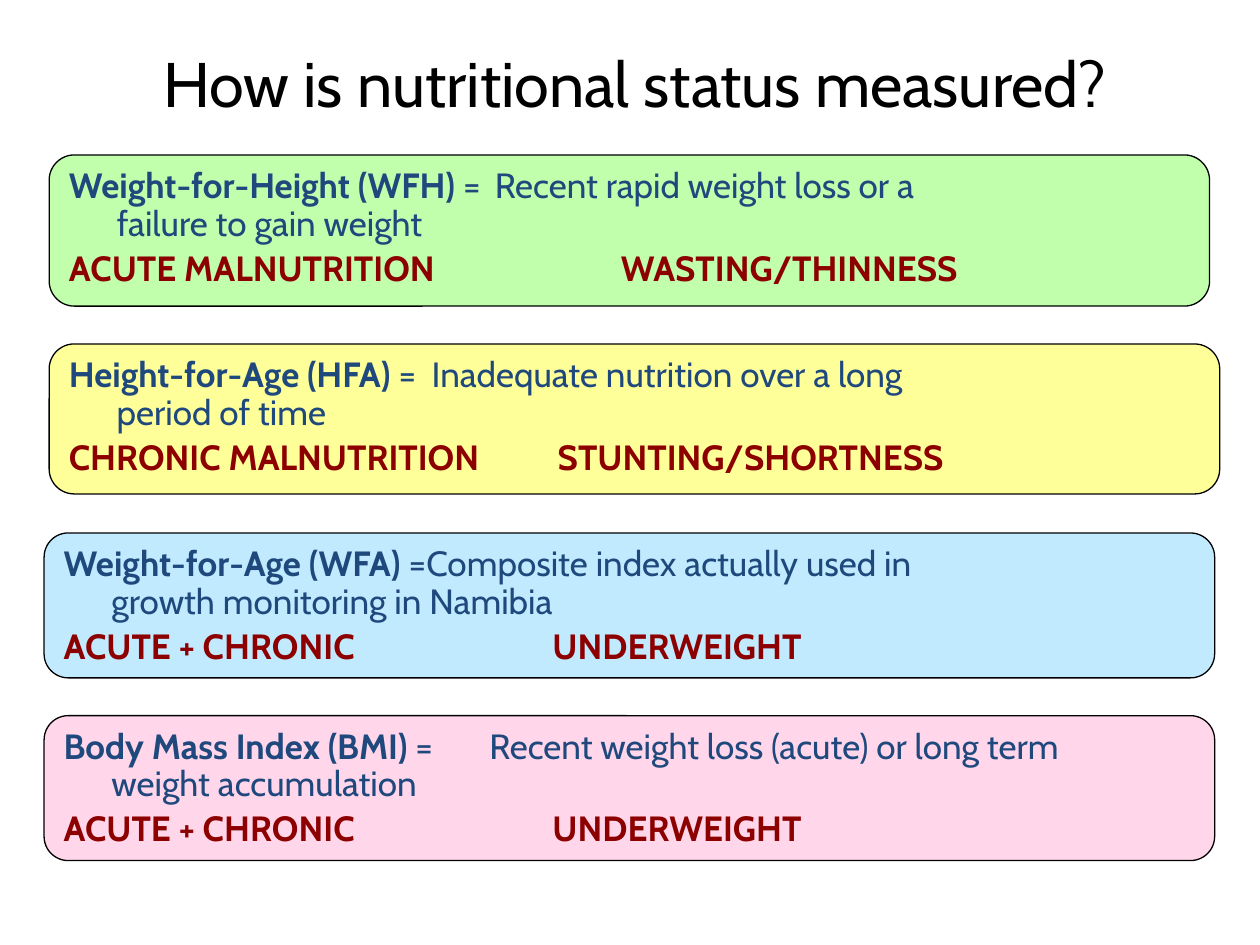
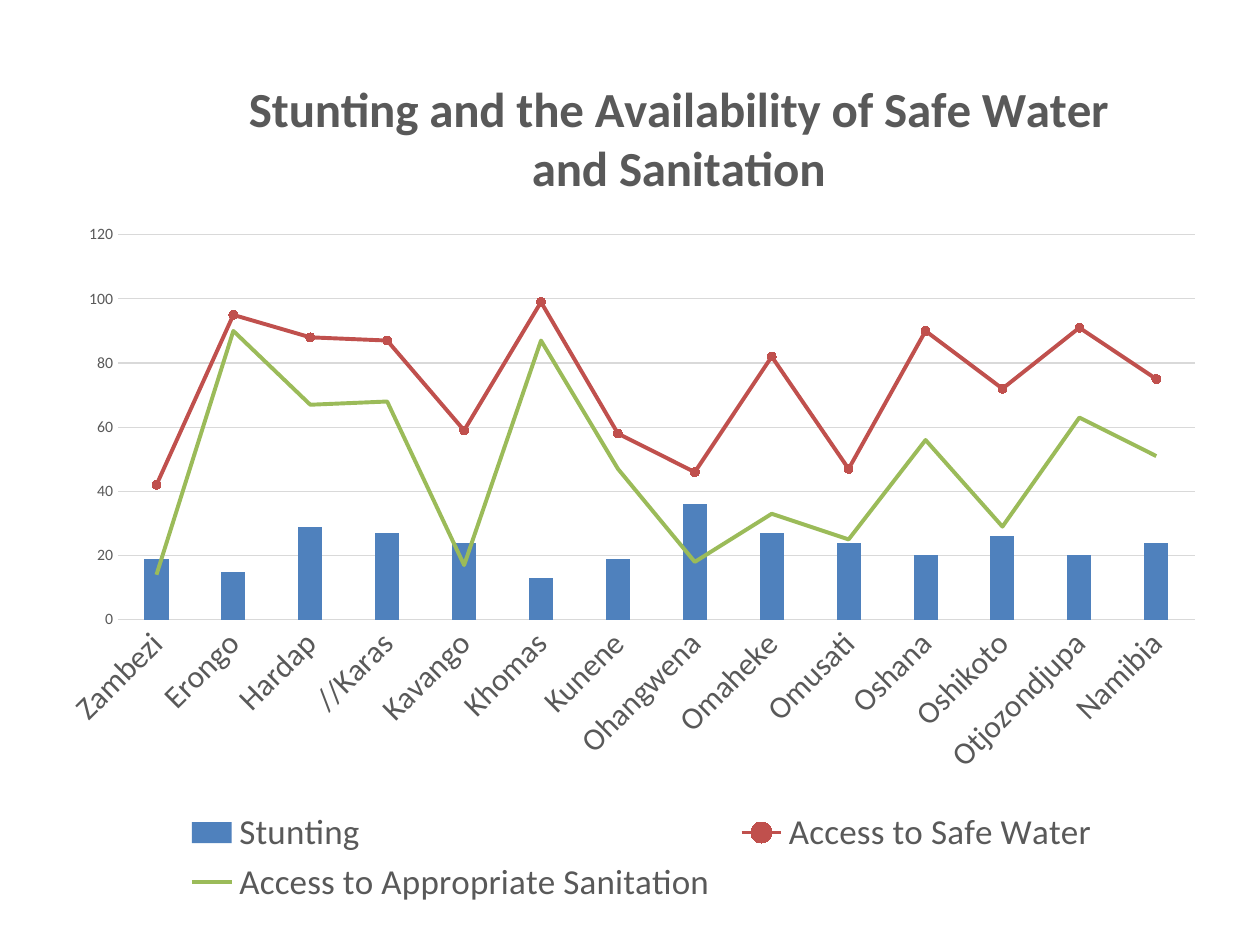
from copy import deepcopy
from lxml.etree import SubElement
from pptx import Presentation
from pptx.chart.data import CategoryChartData
from pptx.dml.color import RGBColor
from pptx.enum.chart import (XL_CHART_TYPE, XL_LEGEND_POSITION,
                             XL_MARKER_STYLE, XL_TICK_MARK)
from pptx.enum.shapes import MSO_SHAPE
from pptx.enum.text import MSO_ANCHOR, PP_ALIGN
from pptx.oxml import parse_xml
from pptx.oxml.ns import nsdecls, qn
from pptx.util import Inches, Pt

BLACK, NAVY, MAROON = "000000", "1F497D", "8C0000"
GREY, PALE = "595959", "D9D9D9"
HEAD, BODY = "Cabin", "Calibri"

CARDS = [
    ((0.39, 1.23, 9.21, 1.2), "66FF33", "Weight-for-Height (WFH)",
     " =\tRecent rapid weight loss or a", "failure to gain weight",
     "ACUTE MALNUTRITION\t\t\tWASTING/THINNESS"),
    ((0.39, 2.73, 9.29, 1.19), "FFFF00", "Height-for-Age (HFA)",
     " =\tInadequate nutrition over a long", "period of time",
     "CHRONIC MALNUTRITION\t\tSTUNTING/SHORTNESS"),
    ((0.35, 4.23, 9.29, 1.15), "66CCFF", "Weight-for-Age (WFA)",
     " =\tComposite index actually used in", "growth monitoring in Namibia",
     "ACUTE + CHRONIC\t\t\t\tUNDERWEIGHT"),
    ((0.35, 5.68, 9.29, 1.15), "FF99CC", "Body Mass Index (BMI)",
     " =\tRecent weight loss (acute) or long term", "weight accumulation",
     "ACUTE + CHRONIC\t\t\t\tUNDERWEIGHT"),
]

REGIONS = ["Zambezi", "Erongo", "Hardap", "//Karas", "Kavango", "Khomas",
           "Kunene", "Ohangwena", "Omaheke", "Omusati", "Oshana",
           "Oshikoto", "Otjozondjupa", "Namibia"]
SERIES = [
    ("Stunting", "4F81BD",
     [19, 15, 29, 27, 24, 13, 19, 36, 27, 24, 20, 26, 20, 24]),
    ("Access to Safe Water", "C0504D",
     [42, 95, 88, 87, 59, 99, 58, 46, 82, 47, 90, 72, 91, 75]),
    ("Access to Appropriate Sanitation", "9BBB59",
     [14, 90, 67, 68, 17, 87, 47, 18, 33, 25, 56, 29, 63, 51]),
]


def rgb(code):
    """Turn a hex string into a colour."""
    return RGBColor.from_string(code)


def style(font, size, code, name, bold=False):
    """Set the look of a font."""
    font.size, font.name, font.bold = Pt(size), name, bold
    font.color.rgb = rgb(code)


def paint(fill, code, alpha=None):
    """Fill with one colour, see-through if alpha percent is given."""
    fill.solid()
    fill.fore_color.rgb = rgb(code)
    if alpha:
        tint = fill._xPr.find(qn("a:solidFill"))[0]
        SubElement(tint, qn("a:alpha")).set("val", str(alpha * 1000))


def stroke(line, code, width):
    """Set the colour and width of a line."""
    line.color.rgb = rgb(code)
    line.width = Pt(width)


def title(slide, text, box):
    """Add a centred slide title."""
    frame = slide.shapes.add_textbox(*map(Inches, box)).text_frame
    frame.word_wrap = True
    frame.vertical_anchor = MSO_ANCHOR.MIDDLE
    frame.text = text
    para = frame.paragraphs[0]
    para.alignment = PP_ALIGN.CENTER
    style(para.runs[0].font, 36, BLACK, HEAD)


def card(slide, box, code, term, start, rest, result):
    """Add one rounded card with an index, its meaning and its result."""
    shape = slide.shapes.add_shape(MSO_SHAPE.ROUNDED_RECTANGLE,
                                   *map(Inches, box))
    shape.shadow.inherit = False
    paint(shape.fill, code, 40)
    stroke(shape.line, BLACK, 0.75)
    frame = shape.text_frame
    frame.word_wrap = True
    frame.vertical_anchor = MSO_ANCHOR.TOP
    frame.text = term + "\n" + result
    top, low = frame.paragraphs
    top.add_run().text = start
    top.add_line_break()
    top.add_run().text = rest
    for para, hue in ((top, NAVY), (low, MAROON)):
        para.alignment = PP_ALIGN.LEFT
        para.line_spacing = 0.9
        para.space_before = Pt(4)
        props = para._p.get_or_add_pPr()
        props.set("marL", str(Inches(0.38)))
        props.set("indent", str(Inches(-0.38)))
        for spot, run in enumerate(para.runs):
            style(run.font, 20, hue, HEAD, spot == 0)


def place(node, left, top, width=None, height=None, inner=False):
    """Fix a chart part at fractions of the chart's size."""
    for old in node.findall(qn("c:layout")):
        node.remove(old)
    pairs = [("xMode", "edge"), ("yMode", "edge"), ("x", left), ("y", top)]
    if inner:
        pairs.insert(0, ("layoutTarget", "inner"))
    if width:
        pairs += [("w", width), ("h", height)]
    parts = "".join(f'<c:{key} val="{val}"/>' for key, val in pairs)
    layout = parse_xml(f'<c:layout {nsdecls("c")}><c:manualLayout>{parts}'
                       '</c:manualLayout></c:layout>')
    before = [kid for kid in node
              if kid.tag in (qn("c:tx"), qn("c:legendPos"))]
    node.insert(node.index(before[-1]) + 1 if before else 0, layout)


def split(chart):
    """Move all series but the first from columns to lines."""
    bars = chart.plots[0]._element
    lines = parse_xml(f'<c:lineChart {nsdecls("c")}>'
                      '<c:grouping val="standard"/><c:varyColors val="0"/>'
                      '</c:lineChart>')
    for ser in bars.findall(qn("c:ser"))[1:]:
        for flag in ser.findall(qn("c:invertIfNegative")):
            ser.remove(flag)
        lines.append(ser)
    SubElement(lines, qn("c:marker")).set("val", "1")
    for axis in bars.findall(qn("c:axId")):
        lines.append(deepcopy(axis))
    bars.addnext(lines)


def plot(slide, box):
    """Add the chart of stunting columns and access lines."""
    data = CategoryChartData()
    data.categories = REGIONS
    for name, _, vals in SERIES:
        data.add_series(name, vals)
    chart = slide.shapes.add_chart(XL_CHART_TYPE.COLUMN_CLUSTERED,
                                   *map(Inches, box), data).chart
    style(chart.font, 10, BLACK, BODY)
    split(chart)
    bars, lines = chart.plots
    bars.gap_width, bars.vary_by_categories = 219, False
    paint(bars.series[0].format.fill, SERIES[0][1])
    for ser, (_, code, _) in zip(lines.series, SERIES[1:]):
        stroke(ser.format.line, code, 2.25)
        ser.smooth = False
        ser.marker.style = XL_MARKER_STYLE.NONE
    dots = lines.series[0].marker
    dots.style, dots.size = XL_MARKER_STYLE.CIRCLE, 5
    paint(dots.format.fill, SERIES[1][1])
    stroke(dots.format.line, SERIES[1][1], 0.75)
    axes(chart)
    labels(chart)
    place(chart._chartSpace.chart.plotArea, 0.064, 0.227, 0.917, 0.441, True)


def axes(chart):
    """Style both axes and the grid."""
    cats, vals = chart.category_axis, chart.value_axis
    for axis, size in ((cats, 18), (vals, 9)):
        axis.major_tick_mark = axis.minor_tick_mark = XL_TICK_MARK.NONE
        style(axis.tick_labels.font, size, GREY, BODY)
    cats._element.txPr.bodyPr.set("rot", "-2700000")
    stroke(cats.format.line, PALE, 0.75)
    vals.format.line.fill.background()
    vals.minimum_scale, vals.maximum_scale, vals.major_unit = 0, 120, 20
    stroke(vals.major_gridlines.format.line, PALE, 0.75)


def labels(chart):
    """Add the chart's title and legend."""
    head = chart.chart_title
    head.text_frame.text = ("Stunting and the Availability of Safe Water "
                            "and Sanitation")
    run = head.text_frame.paragraphs[0].runs[0]
    style(run.font, 28, GREY, BODY, True)
    place(head._element, 0.168, 0.035)
    chart.has_legend = True
    key = chart.legend
    key.position = XL_LEGEND_POSITION.BOTTOM
    key.include_in_layout = False
    style(key.font, 20, GREY, BODY)
    place(key._element, 0.11, 0.88, 0.8, 0.12)


def main():
    """Build both slides and save them."""
    deck = Presentation()
    deck.slide_width, deck.slide_height = Inches(10), Inches(7.5)
    blank = deck.slide_layouts[6]
    first = deck.slides.add_slide(blank)
    title(first, "How is nutritional status measured?",
          (0.51, 0.33, 9.06, 0.65))
    for item in CARDS:
        card(first, *item)
    plot(deck.slides.add_slide(blank), (0.34, 0.29, 9.32, 6.93))
    deck.save("out.pptx")


if __name__ == "__main__":
    main()
